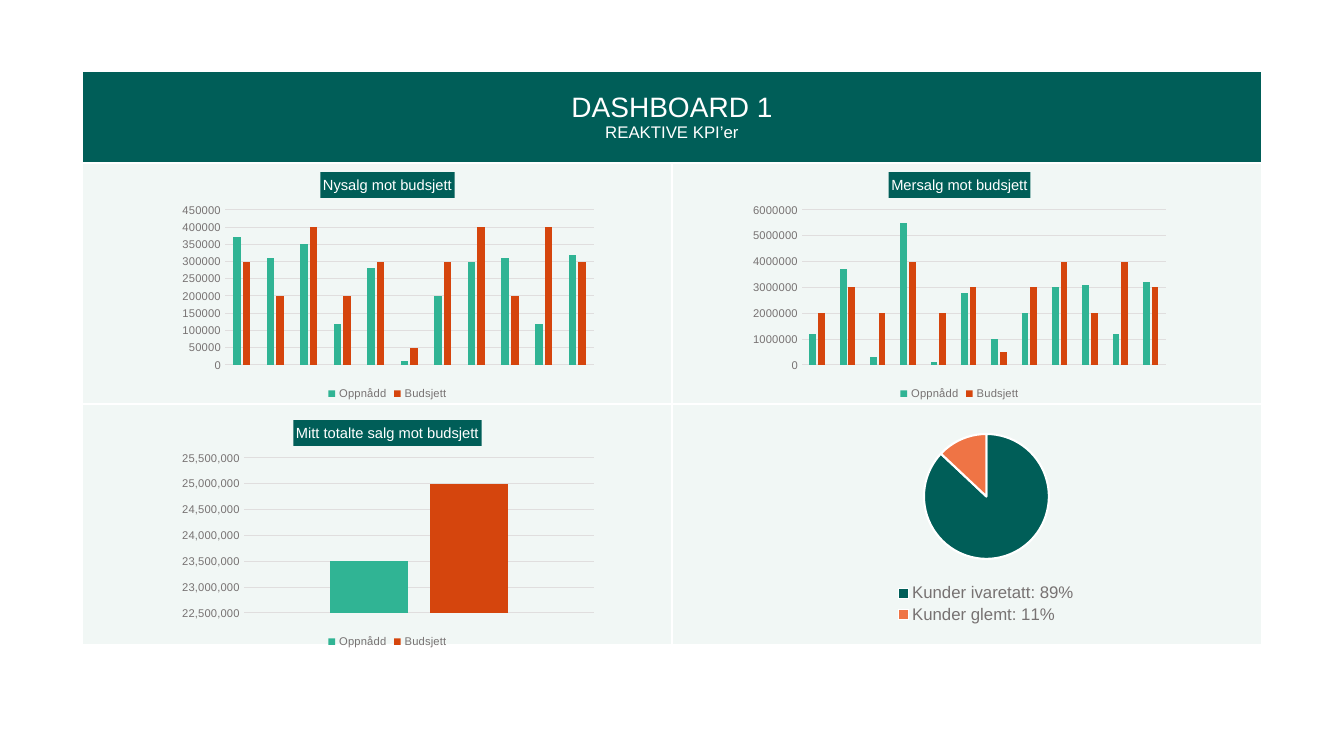
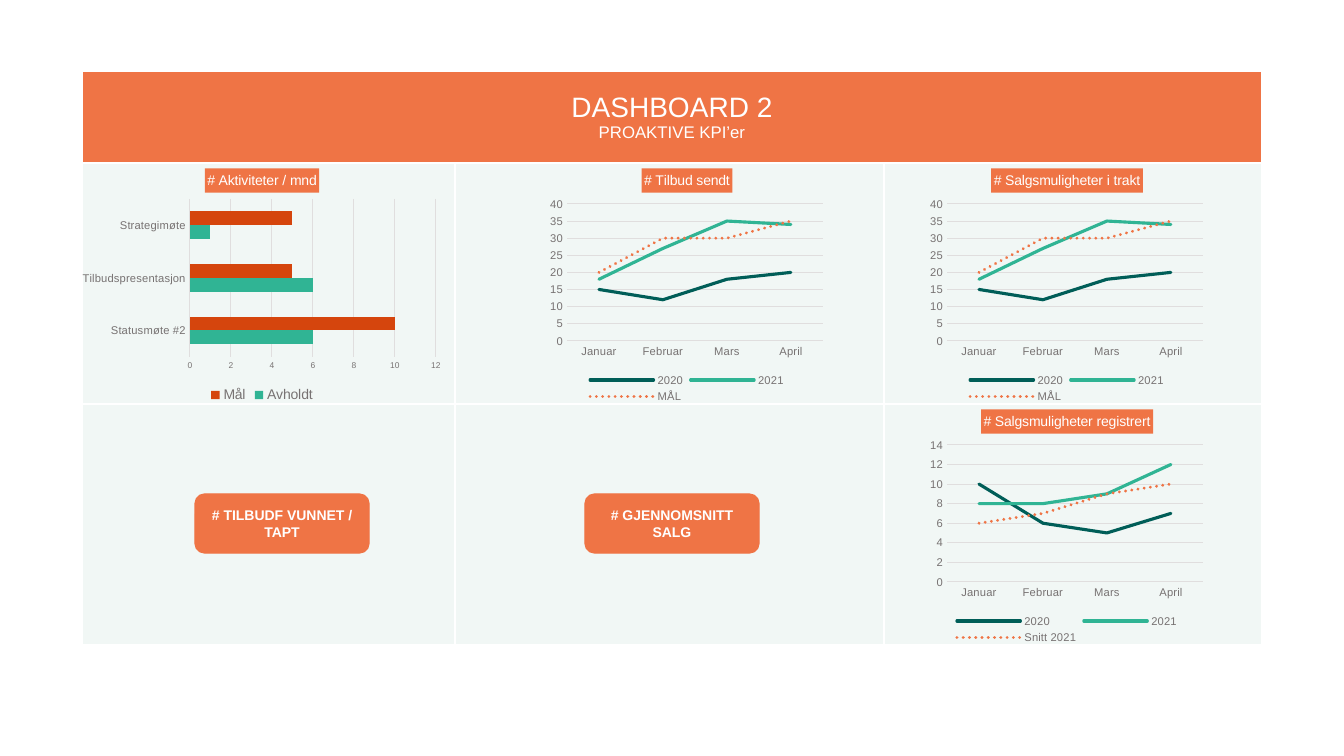
from dataclasses import dataclass

from lxml import etree
from pptx import Presentation
from pptx import util as u
from pptx.chart import data
from pptx.dml.color import RGBColor
from pptx.enum import chart as ch
from pptx.enum import dml, shapes, text
from pptx.oxml import ns

EMU_PER_PX = 914400 / 100.8


@dataclass(frozen=True)
class Theme:
    font: str = "Arial"
    white: str = "FFFFFF"
    panel: str = "F1F7F5"
    green: str = "005E58"
    orange: str = "EF7445"
    mint: str = "30B494"
    red: str = "D5450D"
    ink: str = "2B2929"
    label: str = "777272"
    grid: str = "E0DEDE"
    heading: float = 20
    subheading: float = 12
    column_title: float = 10.5
    body: float = 10
    small: float = 8
    tiny: float = 6


T = Theme()


def px(value):
    return u.Emu(round(value * EMU_PER_PX))


def place(box):
    return [px(value) for value in box]


def rgb(color):
    return RGBColor.from_string(color)


def style_font(font, size, color, bold=False):
    font.name = T.font
    font.size = u.Pt(size)
    font.bold = bold
    font.color.rgb = rgb(color)


def paint(fill, color):
    fill.solid()
    fill.fore_color.rgb = rgb(color)


def stroke(line, color, width):
    line.color.rgb = rgb(color)
    line.width = u.Pt(width)


def add_board(slide, box, columns, rows, heading, subheading, accent):
    board = slide.shapes.add_table(len(rows), len(columns), *place(box)).table
    for column, width in zip(board.columns, columns):
        column.width = px(width)
    for row, height in zip(board.rows, rows):
        row.height = px(height)
    for index, row in enumerate(board.rows):
        for cell in row.cells:
            paint(cell.fill, T.panel if index else accent)
    header = board.cell(0, 0)
    header.merge(board.cell(0, len(columns) - 1))
    header.vertical_anchor = text.MSO_ANCHOR.MIDDLE
    header.text_frame.text = f"{heading}\n{subheading}"
    for paragraph, size in zip(header.text_frame.paragraphs, (T.heading, T.subheading)):
        paragraph.alignment = text.PP_ALIGN.CENTER
        style_font(paragraph.runs[0].font, size, T.white)


def set_plot_layout(chart, box, plot):
    area = chart._chartSpace.chart.plotArea
    for old in area.findall(ns.qn("c:layout")):
        area.remove(old)
    layout = etree.Element(ns.qn("c:layout"))
    manual = etree.SubElement(layout, ns.qn("c:manualLayout"))
    left, top, width, height = plot
    settings = {
        "layoutTarget": "inner", "xMode": "edge", "yMode": "edge",
        "x": left / box[2], "y": top / box[3],
        "w": width / box[2], "h": height / box[3],
    }
    for tag, value in settings.items():
        etree.SubElement(manual, ns.qn(f"c:{tag}"), val=str(value))
    area.insert(0, layout)


def add_chart(slide, kind, box, plot, categories, series, legend_size):
    values = data.CategoryChartData()
    values.categories = categories
    for name, numbers in series.items():
        values.add_series(name, numbers)
    chart = slide.shapes.add_chart(kind, *place(box), values).chart
    style_font(chart.font, T.body, T.ink)
    chart.has_title = False
    chart.has_legend = True
    chart.legend.position = ch.XL_LEGEND_POSITION.BOTTOM
    chart.legend.include_in_layout = False
    style_font(chart.legend.font, legend_size, T.label)
    set_plot_layout(chart, box, plot)
    return chart


def add_title(chart, title, size, accent):
    chart.has_title = True
    chart.chart_title.text_frame.text = title
    style_font(chart.chart_title.text_frame.paragraphs[0].runs[0].font, size, T.white)
    paint(chart.chart_title.format.fill, accent)


def style_axes(chart, value_size=T.small):
    values, categories = chart.value_axis, chart.category_axis
    for axis, size in ((values, value_size), (categories, T.small)):
        axis.major_tick_mark = axis.minor_tick_mark = ch.XL_TICK_MARK.NONE
        style_font(axis.tick_labels.font, size, T.label)
    values.has_major_gridlines = True
    stroke(values.major_gridlines.format.line, T.grid, 0.75)
    values.format.line.fill.background()
    stroke(categories.format.line, T.grid, 0.75)


def color_bars(chart, gap, overlap):
    bars = chart.plots[0]
    bars.vary_by_categories = False
    bars.gap_width, bars.overlap = gap, overlap
    for series, color in zip(bars.series, (T.mint, T.red)):
        paint(series.format.fill, color)
        series.invert_if_negative = False


def add_budget_chart(slide, box, axis_width, title, achieved, budget):
    plot = (axis_width, 48, 421 - axis_width, 155)
    months = [str(month) for month in range(1, len(achieved) + 1)]
    chart = add_chart(slide, ch.XL_CHART_TYPE.COLUMN_CLUSTERED, box, plot, months,
                      {"Oppnådd": achieved, "Budsjett": budget}, T.small)
    add_title(chart, title, T.column_title, T.green)
    style_axes(chart)
    chart.category_axis.visible = False
    color_bars(chart, 219, -27)
    return chart


def add_customer_pie(slide, box):
    chart = add_chart(slide, ch.XL_CHART_TYPE.PIE, box, (126, 14, 125, 125),
                      ["Kunder ivaretatt: 89%", "Kunder glemt: 11%"],
                      {"Series 1": [87, 13]}, T.subheading)
    for index, color in enumerate((T.green, T.orange)):
        wedge = chart.plots[0].series[0].points[index].format
        paint(wedge.fill, color)
        stroke(wedge.line, T.white, 1.5)


def add_activity_chart(slide, box):
    chart = add_chart(slide, ch.XL_CHART_TYPE.BAR_CLUSTERED, box, (115, 41, 246, 158),
                      ["Statusmøte #2", "Tilbudspresentasjon", "Strategimøte"],
                      {"Avholdt": [6, 6, 1], "Mål": [10, 5, 5]}, T.body)
    add_title(chart, "# Aktiviteter / mnd", T.body, T.orange)
    style_axes(chart, T.tiny)
    color_bars(chart, 182, 0)


def add_trend_chart(slide, box, title, series):
    chart = add_chart(slide, ch.XL_CHART_TYPE.LINE, box, (22, 46, 256, 137),
                      ["Januar", "Februar", "Mars", "April"], series, T.small)
    add_title(chart, title, T.body, T.orange)
    style_axes(chart)
    chart.plots[0].vary_by_categories = False
    for trend, color in zip(chart.plots[0].series, (T.green, T.mint, T.orange)):
        trend.smooth = False
        trend.marker.style = ch.XL_MARKER_STYLE.NONE
        stroke(trend.format.line, color, 2.25)
        trend._element.xpath("./c:spPr/a:ln")[0].set("cap", "rnd")
    trend.format.line.dash_style = dml.MSO_LINE.ROUND_DOT


def add_kpi_button(slide, box, label):
    button = slide.shapes.add_shape(shapes.MSO_SHAPE.ROUNDED_RECTANGLE, *place(box))
    button.shadow.inherit = False
    paint(button.fill, T.orange)
    stroke(button.line, T.orange, 1)
    frame = button.text_frame
    frame.word_wrap = True
    frame.vertical_anchor = text.MSO_ANCHOR.MIDDLE
    frame.text = label
    frame.paragraphs[0].alignment = text.PP_ALIGN.CENTER
    style_font(frame.paragraphs[0].runs[0].font, T.body, T.white, True)


BOARD = (82, 71, 1180, 574)
ROWS = (92, 241, 241)


def build_reactive(slide):
    add_board(slide, BOARD, (590, 590), ROWS, "DASHBOARD 1", "REAKTIVE KPI’er", T.green)
    add_customer_pie(slide, (798, 420, 376, 208))
    add_budget_chart(
        slide, (173, 162, 429, 242), 52, "Nysalg mot budsjett",
        [370000, 310000, 350000, 120000, 280000, 10000,
         200000, 300000, 310000, 120000, 320000],
        [300000, 200000, 400000, 200000, 300000, 50000,
         300000, 400000, 200000, 400000, 300000])
    add_budget_chart(
        slide, (745, 162, 429, 242), 57, "Mersalg mot budsjett",
        [1200000, 3700000, 300000, 5500000, 100000, 2800000,
         1000000, 2000000, 3000000, 3100000, 1200000, 3200000],
        [2000000, 3000000, 2000000, 4000000, 2000000, 3000000,
         500000, 3000000, 4000000, 2000000, 4000000, 3000000])
    total = add_budget_chart(slide, (173, 410, 429, 242), 71,
                             "Mitt totalte salg mot budsjett", [23500000], [25000000])
    scale = total.value_axis
    scale.minimum_scale, scale.maximum_scale = 22500000, 25500000
    scale.major_unit = 500000
    scale.tick_labels.number_format = "#,##0"
    scale.tick_labels.number_format_is_linked = False


def build_proactive(slide):
    add_board(slide, BOARD, (373, 429, 378), ROWS, "DASHBOARD 2", "PROAKTIVE KPI’er", T.orange)
    for left, label in ((195, "# TILBUDF VUNNET / TAPT"), (585, "# GJENNOMSNITT SALG")):
        add_kpi_button(slide, (left, 494, 174, 59), label)
    add_activity_chart(slide, (75, 158, 374, 249))
    pipeline = {"2020": [15, 12, 18, 20], "2021": [18, 27, 35, 34], "MÅL": [20, 30, 30, 35]}
    registered = {"2020": [10, 6, 5, 7], "2021": [8, 8, 9, 12], "Snitt 2021": [6, 7, 9, 10]}
    for left, top, title, series in (
        (925, 399, "# Salgsmuligheter registrert", registered),
        (925, 158, "# Salgsmuligheter i trakt", pipeline),
        (545, 158, "# Tilbud sendt", pipeline),
    ):
        add_trend_chart(slide, (left, top, 284, 249), title, series)


def main():
    deck = Presentation()
    deck.slide_width, deck.slide_height = px(1344), px(756)
    for build in (build_reactive, build_proactive):
        build(deck.slides.add_slide(deck.slide_layouts[6]))
    deck.save("out.pptx")


if __name__ == "__main__":
    main()
